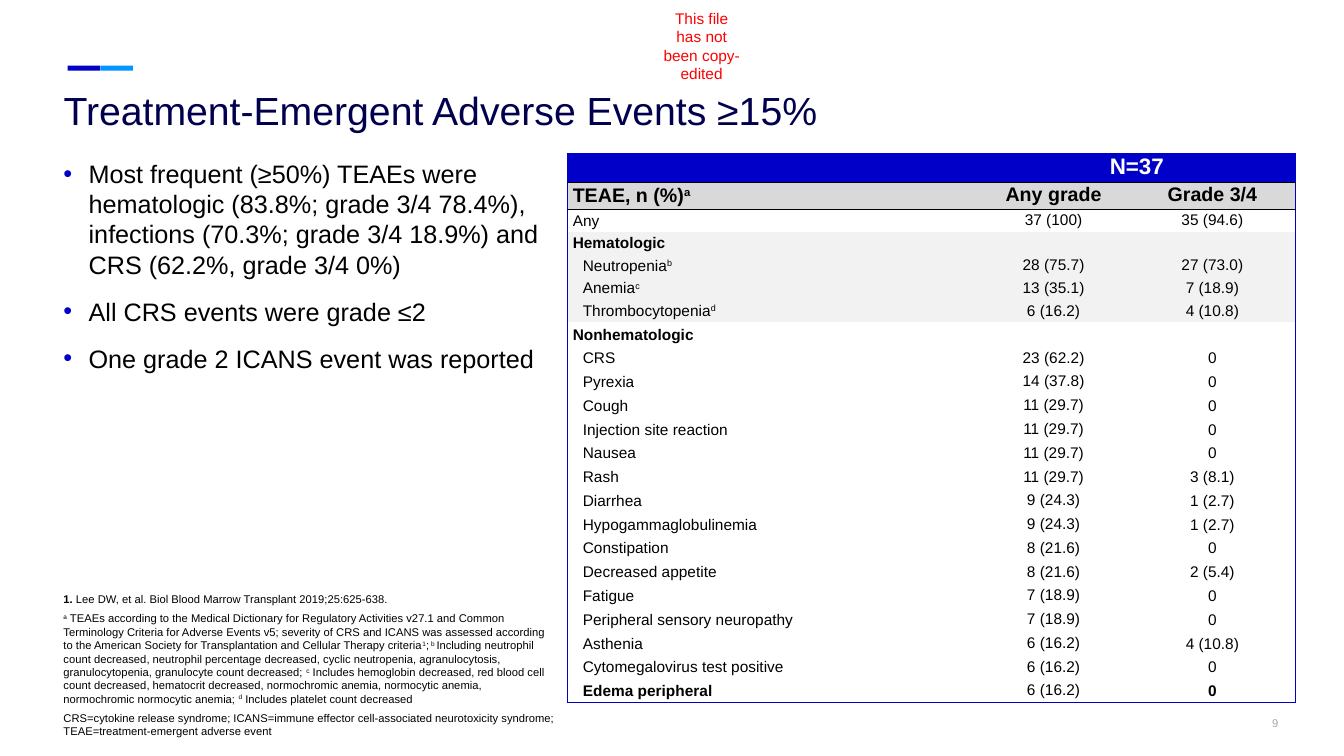
from lxml import etree
from pptx import Presentation
from pptx import util as u
from pptx.dml.color import RGBColor
from pptx.enum import shapes, text
from pptx.oxml.ns import qn

WIDTH, HEIGHT = u.Inches(13.33), u.Inches(7.5)
BLUE, SKY, NAVY = "0000C9", "0095FF", "00004E"
BLACK, WHITE, RED, GRAY = "000000", "FFFFFF", "FF0000", "A1AAB1"
HEADER_GRAY, BAND_GRAY = "D9D9D9", "F2F2F2"
PLAIN_TABLE_STYLE = "{2D5ABB26-0587-4C30-8999-92F81FD0307C}"
LEFT, CONTENT_TOP = 3.98, 20.27  # percent of the slide
CENTER = text.PP_ALIGN.CENTER

BULLETS = [
    "Most frequent (≥50%) TEAEs were hematologic (83.8%; grade 3/4 78.4%), "
    "infections (70.3%; grade 3/4 18.9%) and CRS (62.2%, grade 3/4 0%)",
    "All CRS events were grade ≤2",
    "One grade 2 ICANS event was reported",
]
# Text between carets is superscript
FOOTNOTES = [
    ("1. ", "Lee DW, et al. Biol Blood Marrow Transplant 2019;25:625-638."),
    ("", "^a^ TEAEs according to the Medical Dictionary for Regulatory Activities v27.1 and "
     "Common Terminology Criteria for Adverse Events v5; severity of CRS and ICANS was "
     "assessed according to the American Society for Transplantation and Cellular Therapy "
     "criteria^1^;^ b ^Including neutrophil count decreased, neutrophil percentage "
     "decreased, cyclic neutropenia, agranulocytosis, granulocytopenia, granulocyte count "
     "decreased; ^c^ Includes hemoglobin decreased, red blood cell count decreased, "
     "hematocrit decreased, normochromic anemia, normocytic anemia, normochromic normocytic "
     "anemia; ^d^ Includes platelet count decreased"),
    ("", "CRS=cytokine release syndrome; ICANS=immune effector cell-associated neurotoxicity "
     "syndrome; TEAE=treatment-emergent adverse event"),
]
COLUMNS = [30.53, 11.25, 12.38]
EVENTS = [
    ("", "N=37", ""),
    ("TEAE, n (%)^a^", "Any grade", "Grade 3/4"),
    ("Any", "37 (100)", "35 (94.6)"),
    ("Hematologic", "", ""),
    ("Neutropenia^b^", "28 (75.7)", "27 (73.0)"),
    ("Anemia^c^", "13 (35.1)", "7 (18.9)"),
    ("Thrombocytopenia^d^", "6 (16.2)", "4 (10.8)"),
    ("Nonhematologic", "", ""),
    ("CRS", "23 (62.2)", "0"),
    ("Pyrexia", "14 (37.8)", "0"),
    ("Cough", "11 (29.7)", "0"),
    ("Injection site reaction", "11 (29.7)", "0"),
    ("Nausea", "11 (29.7)", "0"),
    ("Rash", "11 (29.7)", "3 (8.1)"),
    ("Diarrhea", "9 (24.3)", "1 (2.7)"),
    ("Hypogammaglobulinemia", "9 (24.3)", "1 (2.7)"),
    ("Constipation", "8 (21.6)", "0"),
    ("Decreased appetite", "8 (21.6)", "2 (5.4)"),
    ("Fatigue", "7 (18.9)", "0"),
    ("Peripheral sensory neuropathy", "7 (18.9)", "0"),
    ("Asthenia", "6 (16.2)", "4 (10.8)"),
    ("Cytomegalovirus test positive", "6 (16.2)", "0"),
    ("Edema peripheral", "6 (16.2)", "0"),
]
LAST = len(EVENTS) - 1
HEMATOLOGIC, NONHEMATOLOGIC = 3, 7  # group heading rows


def rgb(code):
    return RGBColor.from_string(code)


def across(percent):
    return int(WIDTH * percent / 100)


def down(percent):
    return int(HEIGHT * percent / 100)


def area(left, top, width, height):
    return across(left), down(top), across(width), down(height)


def write(paragraph, content, size=11, color=BLACK, bold=False, align=text.PP_ALIGN.LEFT):
    paragraph.alignment = align
    for index, part in enumerate(content.split("^")):
        if not part:
            continue
        run = paragraph.add_run()
        run.text = part
        run.font.name, run.font.size, run.font.bold = "Arial", u.Pt(size), bold
        run.font.color.rgb = rgb(color)
        if index % 2:
            run.font._element.set("baseline", "30000")


def add_bullet(paragraph):
    properties = paragraph._p.get_or_add_pPr()
    properties.set("marL", str(u.Inches(0.25)))
    properties.set("indent", str(-u.Inches(0.25)))
    color = etree.SubElement(properties, qn("a:buClr"))
    etree.SubElement(color, qn("a:srgbClr"), val=BLUE)
    etree.SubElement(properties, qn("a:buFont"), typeface="Arial")
    etree.SubElement(properties, qn("a:buChar"), char="•")


def add_box(slide, place, anchor=text.MSO_ANCHOR.TOP, wrap=True):
    frame = slide.shapes.add_textbox(*place).text_frame
    frame.word_wrap, frame.vertical_anchor = wrap, anchor
    return frame


def paragraphs(frame, items):
    for index, item in enumerate(items):
        yield (frame.add_paragraph() if index else frame.paragraphs[0]), item


def add_bar(slide, place, color):
    bar = slide.shapes.add_shape(shapes.MSO_SHAPE.RECTANGLE, *place)
    bar.shadow.inherit = False
    bar.fill.solid()
    bar.fill.fore_color.rgb = rgb(color)
    bar.line.fill.background()


def set_borders(cell, **colors):
    properties = cell._tc.get_or_add_tcPr()
    for side in "LRTB":
        line = etree.SubElement(properties, qn("a:ln" + side), w=str(u.Pt(1)))
        if side in colors:
            fill = etree.SubElement(line, qn("a:solidFill"))
            etree.SubElement(fill, qn("a:srgbClr"), val=colors[side])
        else:
            etree.SubElement(line, qn("a:noFill"))


def cell_borders(row, column):
    colors = {}
    if column == 0:
        colors["L"] = BLUE
    if column == 2 or row == 0 and column == 1:
        colors["R"] = BLUE
    if row <= 2:
        colors["T"] = BLACK if row else BLUE
    if row <= 1 or row == LAST:
        colors["B"] = BLUE if row == LAST else BLACK
    return colors


def row_fill(row):
    if row < 2:
        return (BLUE, HEADER_GRAY)[row]
    return BAND_GRAY if HEMATOLOGIC <= row < NONHEMATOLOGIC else WHITE


def format_cell(cell, row, column, content):
    set_borders(cell, **cell_borders(row, column))
    cell.fill.solid()
    cell.fill.fore_color.rgb = rgb(row_fill(row))
    cell.vertical_anchor = text.MSO_ANCHOR.MIDDLE
    tight = column > 0 and row <= 4
    cell.margin_left = cell.margin_right = u.Inches(0.04 if tight else 0.05)
    cell.margin_top, cell.margin_bottom = u.Inches(0 if tight else 0.02), u.Inches(0.02)
    paragraph = cell.text_frame.paragraphs[0]
    heading = row in (0, 1, HEMATOLOGIC, NONHEMATOLOGIC)
    write(paragraph, content, size={0: 16, 1: 14}.get(row, 11),
          color=BLACK if row else WHITE,
          bold=heading or row == LAST and column != 1,
          align=CENTER if column else text.PP_ALIGN.LEFT)
    if row >= NONHEMATOLOGIC and column != 1 and content:
        paragraph.line_spacing = 1.07
    if column == 0 and row > HEMATOLOGIC and not heading:
        paragraph._p.get_or_add_pPr().set("marL", str(u.Inches(0.1)))
    if not content:
        etree.SubElement(paragraph._p, qn("a:endParaRPr"), sz="1100")


def add_event_table(slide):
    heights = [3.6, 3.47] + [2.8] * 5 + [2.97] * (LAST - 6)
    place = area(42.24, CONTENT_TOP, sum(COLUMNS), sum(heights))
    frame = slide.shapes.add_table(len(EVENTS), len(COLUMNS), *place)
    table = frame.table
    table.first_row = table.horz_banding = False
    next(frame._element.iter(qn("a:tableStyleId"))).text = PLAIN_TABLE_STYLE
    for column, width in zip(table.columns, COLUMNS):
        column.width = across(width)
    for row, (values, height) in enumerate(zip(EVENTS, heights)):
        table.rows[row].height = down(height)
        for column, content in enumerate(values):
            format_cell(table.cell(row, column), row, column, content)
    table.cell(0, 1).merge(table.cell(0, 2))


def main():
    presentation = Presentation()
    presentation.slide_width, presentation.slide_height = WIDTH, HEIGHT
    slide = presentation.slides.add_slide(presentation.slide_layouts[5])

    # Accent bars, status line and page number
    for index, color in enumerate((BLUE, SKY)):
        add_bar(slide, area(5.03 + 2.43 * index, 8.67, 2.43, 0.67), color)
    status = add_box(slide, area(48.46, 0.53, 7.5, 13.33), wrap=False)
    write(status.paragraphs[0], "This file has not been copy-edited", color=RED, align=CENTER)
    page = add_box(slide, area(90.1, 91.87, 6, 7.6), anchor=text.MSO_ANCHOR.MIDDLE)
    page.margin_left = page.margin_right = u.Inches(0.13)
    write(page.paragraphs[0], "9", size=8, color=GRAY, align=text.PP_ALIGN.RIGHT)

    # Title
    title = slide.shapes.title
    title.left, title.top, title.width, title.height = area(LEFT, 10, 93.62, 8.93)
    title.text_frame.margin_top = title.text_frame.margin_bottom = u.Inches(0.1)
    title.text_frame.auto_size = text.MSO_AUTO_SIZE.SHAPE_TO_FIT_TEXT
    write(title.text_frame.paragraphs[0], "Treatment-Emergent Adverse Events ≥15%",
          size=28, color=NAVY)

    # Key findings
    findings = add_box(slide, area(LEFT, CONTENT_TOP, 38.11, 43.47))
    for paragraph, finding in paragraphs(findings, BULLETS):
        write(paragraph, finding, size=18)
        paragraph.space_before = paragraph.space_after = u.Pt(6)
        add_bullet(paragraph)

    # Footnotes
    notes = add_box(slide, area(LEFT, 77.47, 38.18, 20.8), anchor=text.MSO_ANCHOR.BOTTOM)
    for paragraph, (label, note) in paragraphs(notes, FOOTNOTES):
        write(paragraph, label, size=8, bold=True)
        write(paragraph, note, size=8)
        paragraph.space_before = u.Pt(4)

    add_event_table(slide)
    presentation.save("out.pptx")


if __name__ == "__main__":
    main()
